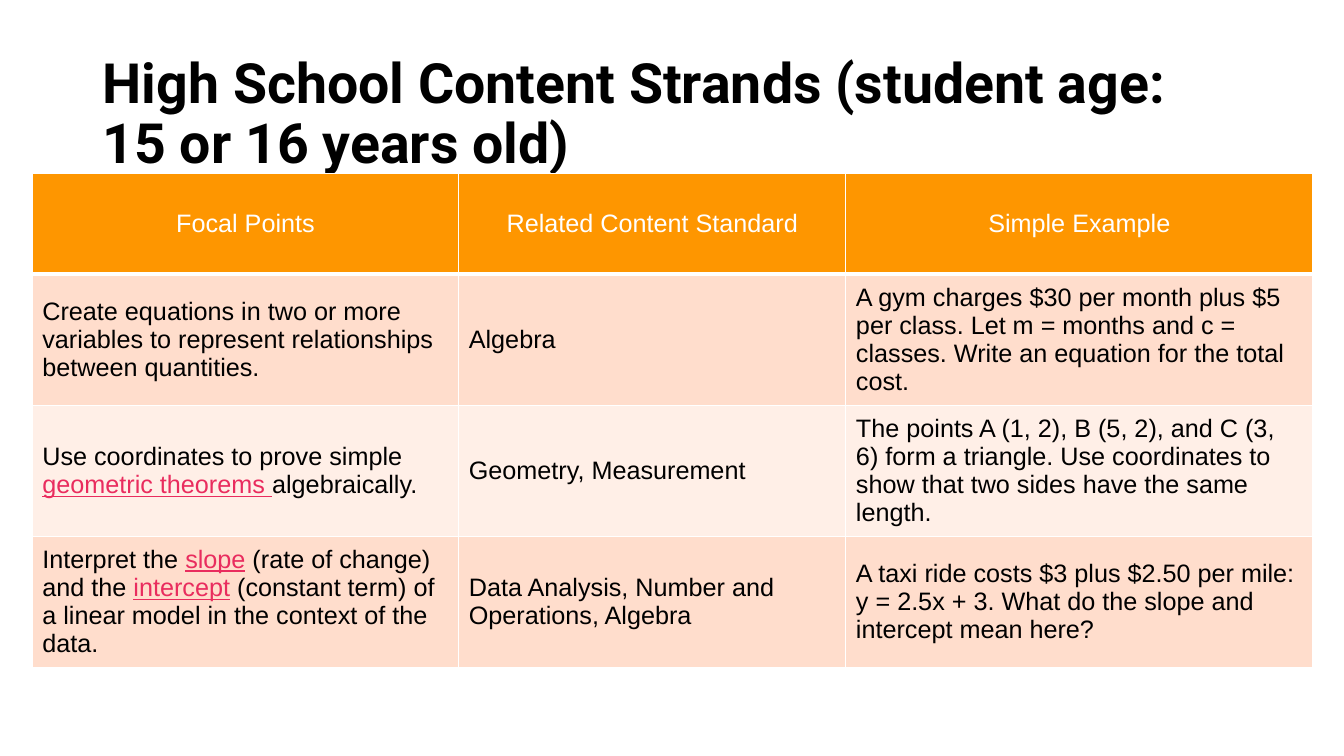
from lxml import etree
from pptx import Presentation
from pptx.dml.color import RGBColor
from pptx.enum.text import MSO_ANCHOR, PP_ALIGN
from pptx.oxml.ns import qn
from pptx.util import Inches, Pt

MIDDLE = MSO_ANCHOR.MIDDLE
LEFT, CENTER = PP_ALIGN.LEFT, PP_ALIGN.CENTER

WHITE, BLACK = "FFFFFF", "000000"
ORANGE, PEACH, PALE_PEACH, PINK = "FE9600", "FFDDCC", "FFEFE7", "E92C5E"

TITLE = "High School Content Strands (student age: 15 or 16 years old)"
TITLE_FORMAT = {"name": "Roboto", "size": Pt(39.6), "bold": True}
CELL_FORMAT = {"name": "Arial", "size": Pt(18), "bold": False}
COLUMN_WIDTHS = (4.23, 3.84, 4.63)
HEADER_HEIGHT, STRAND_HEIGHT = 1, 1.24

HEADINGS = ("Focal Points", "Related Content Standard", "Simple Example")
# In a tuple of pieces, every second piece is a highlighted term.
STRANDS = (
    (
        "Create equations in two or more variables to represent relationships "
        "between quantities.",
        "Algebra",
        "A gym charges $30 per month plus $5 per class. Let m = months and "
        "c = classes. Write an equation for the total cost.",
    ),
    (
        ("Use coordinates to prove simple ", "geometric theorems ", "algebraically."),
        "Geometry, Measurement",
        "The points A (1, 2), B (5, 2), and C (3, 6) form a triangle. Use "
        "coordinates to show that two sides have the same length.",
    ),
    (
        ("Interpret the ", "slope", " (rate of change) and the ", "intercept",
         " (constant term) of a linear model in the context of the data."),
        "Data Analysis, Number and Operations, Algebra",
        "A taxi ride costs $3 plus $2.50 per mile: y = 2.5x + 3. What do the "
        "slope and intercept mean here?",
    ),
)


def rgb(color):
    return RGBColor.from_string(color)


def add_run(paragraph, text, color, font_format):
    run = paragraph.add_run()
    run.text = text
    run.font.color.rgb = rgb(color)
    for attribute, value in font_format.items():
        setattr(run.font, attribute, value)


def add_title(slide):
    box = slide.shapes.add_textbox(Inches(0.92), Inches(0.66), Inches(11.5), Inches(0.97))
    frame = box.text_frame
    frame.word_wrap = True
    frame.vertical_anchor = MIDDLE
    paragraph = frame.paragraphs[0]
    paragraph.line_spacing = 0.9
    add_run(paragraph, TITLE, BLACK, TITLE_FORMAT)


def set_borders(cell, bottom_width):
    """Draw white cell edges; the lines must precede the fill in the XML."""
    properties = cell._tc.get_or_add_tcPr()
    widths = {"a:lnL": 1, "a:lnR": 1, "a:lnT": 1, "a:lnB": bottom_width}
    for tag, width in widths.items():
        line = etree.SubElement(properties, qn(tag), w=str(Pt(width)))
        fill = etree.SubElement(line, qn("a:solidFill"))
        etree.SubElement(fill, qn("a:srgbClr"), val=WHITE)


def fill_cell(cell, content, fill, color, align, bottom_width):
    set_borders(cell, bottom_width)
    cell.fill.solid()
    cell.fill.fore_color.rgb = rgb(fill)
    cell.vertical_anchor = MIDDLE
    paragraph = cell.text_frame.paragraphs[0]
    paragraph.alignment = align
    pieces = (content,) if isinstance(content, str) else content
    for index, piece in enumerate(pieces):
        is_term = index % 2 == 1
        add_run(paragraph, piece, PINK if is_term else color,
                {**CELL_FORMAT, "underline": is_term})


def add_strands_table(slide):
    rows = (HEADINGS, *STRANDS)
    height = HEADER_HEIGHT + STRAND_HEIGHT * len(STRANDS)
    table = slide.shapes.add_table(
        len(rows), len(HEADINGS), Inches(0.32), Inches(1.72),
        Inches(sum(COLUMN_WIDTHS)), Inches(height)).table
    for column, width in zip(table.columns, COLUMN_WIDTHS):
        column.width = Inches(width)
    for row_index, contents in enumerate(rows):
        is_header = row_index == 0
        table.rows[row_index].height = Inches(HEADER_HEIGHT if is_header else STRAND_HEIGHT)
        if is_header:
            style = (ORANGE, WHITE, CENTER, 3)
        else:
            style = (PEACH if row_index % 2 else PALE_PEACH, BLACK, LEFT, 1)
        for column_index, content in enumerate(contents):
            fill_cell(table.cell(row_index, column_index), content, *style)


def main():
    presentation = Presentation()
    presentation.slide_width = Inches(13.33)
    presentation.slide_height = Inches(7.5)
    slide = presentation.slides.add_slide(presentation.slide_layouts[6])
    add_title(slide)
    add_strands_table(slide)
    presentation.save("out.pptx")


if __name__ == "__main__":
    main()
